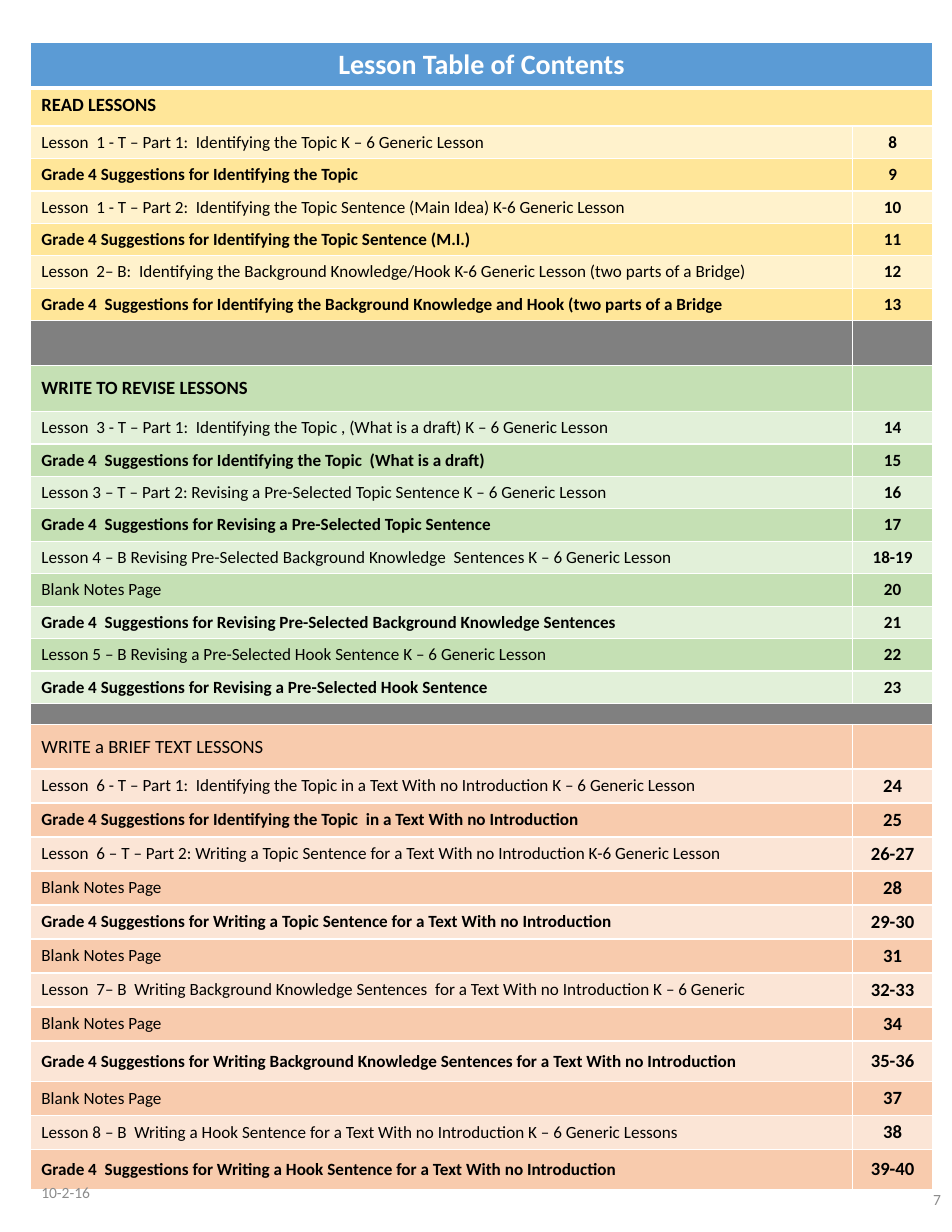
from dataclasses import dataclass

import pptx
import pptx.dml.color
import pptx.enum.text
import pptx.util
from lxml import etree
from pptx.oxml.ns import qn

Inches = pptx.util.Inches
Pt = pptx.util.Pt
ALIGN = pptx.enum.text.PP_ALIGN
ANCHOR = pptx.enum.text.MSO_ANCHOR

COLORS = {
    "white": "FFFFFF", "black": "000000", "footer": "8C8C8C",
    "title": "5B9BD5", "divider": "808080",
    "yellow": "FFE699", "light yellow": "FFF2CC",
    "green": "C5E0B4", "light green": "E2F0D9",
    "orange": "F8CBAD", "light orange": "FBE5D6",
}
BLANK = "Blank Notes Page"

READ = [
    ("Lesson  1 - T – Part 1:  Identifying the Topic K – 6 Generic Lesson", "8"),
    ("Grade 4 Suggestions for Identifying the Topic", "9"),
    ("Lesson  1 - T – Part 2:  Identifying the Topic Sentence (Main Idea) K-6 Generic Lesson", "10"),
    ("Grade 4 Suggestions for Identifying the Topic Sentence (M.I.)", "11"),
    ("Lesson  2– B:  Identifying the Background Knowledge/Hook K-6 Generic Lesson (two parts of a Bridge)", "12"),
    ("Grade 4  Suggestions for Identifying the Background Knowledge and Hook (two parts of a Bridge", "13"),
]
REVISE = [
    ("Lesson  3 - T – Part 1:  Identifying the Topic , (What is a draft) K – 6 Generic Lesson", "14"),
    ("Grade 4  Suggestions for Identifying the Topic  (What is a draft)", "15"),
    ("Lesson 3 – T – Part 2: Revising a Pre-Selected Topic Sentence K – 6 Generic Lesson", "16"),
    ("Grade 4  Suggestions for Revising a Pre-Selected Topic Sentence", "17"),
    ("Lesson 4 – B Revising Pre-Selected Background Knowledge  Sentences K – 6 Generic Lesson", "18-19"),
    (BLANK, "20"),
    ("Grade 4  Suggestions for Revising Pre-Selected Background Knowledge Sentences", "21"),
    ("Lesson 5 – B Revising a Pre-Selected Hook Sentence K – 6 Generic Lesson", "22"),
    ("Grade 4 Suggestions for Revising a Pre-Selected Hook Sentence", "23"),
]
WRITE = [
    ("Lesson  6 - T – Part 1:  Identifying the Topic in a Text With no Introduction K – 6 Generic Lesson", "24"),
    ("Grade 4 Suggestions for Identifying the Topic  in a Text With no Introduction", "25"),
    ("Lesson  6 – T – Part 2: Writing a Topic Sentence for a Text With no Introduction K-6 Generic Lesson", "26-27"),
    (BLANK, "28"),
    ("Grade 4 Suggestions for Writing a Topic Sentence for a Text With no Introduction", "29-30"),
    (BLANK, "31"),
    ("Lesson  7– B  Writing Background Knowledge Sentences  for a Text With no Introduction K – 6 Generic", "32-33"),
    (BLANK, "34"),
    ("Grade 4 Suggestions for Writing Background Knowledge Sentences for a Text With no Introduction", "35-36"),
    (BLANK, "37"),
    ("Lesson 8 – B  Writing a Hook Sentence for a Text With no Introduction K – 6 Generic Lessons", "38"),
    ("Grade 4  Suggestions for Writing a Hook Sentence for a Text With no Introduction", "39-40"),
]
TALL_PAGES = {"35-36", "39-40"}


@dataclass
class Row:
    texts: tuple
    fill: str
    height: float
    sizes: tuple = (12, 12)
    bold: bool = True
    color: str = "black"
    align: object = ALIGN.LEFT
    anchor: object = ANCHOR.MIDDLE
    merged: bool = False
    line_above: float = 1
    line_below: float = 1


def lesson_rows(lessons, hue, height, page_size):
    """Alternate light and full fills, with the grade suggestions in bold."""
    return [
        Row((text, page), hue if index % 2 else f"light {hue}",
            0.36 if page in TALL_PAGES else height, (11, page_size),
            text.startswith("Grade"))
        for index, (text, page) in enumerate(lessons)
    ]


class SlideBuilder:
    font = "Calibri"

    def __init__(self, slide):
        self.slide = slide

    def add_run(self, paragraph, text, size, color, bold=False):
        run = paragraph.add_run()
        run.text = text
        run.font.name = self.font
        run.font.size = Pt(size)
        run.font.bold = bold
        run.font.color.rgb = pptx.dml.color.RGBColor.from_string(COLORS[color])

    def add_footer(self, text, left, top, align):
        box = self.slide.shapes.add_textbox(
            Inches(left), Inches(top), Inches(1.91), Inches(0.59))
        frame = box.text_frame
        frame.word_wrap = True
        frame.vertical_anchor = ANCHOR.MIDDLE
        paragraph = frame.paragraphs[0]
        paragraph.alignment = align
        self.add_run(paragraph, text, 10, "footer")

    def style_cell(self, cell, row):
        properties = cell._tc.get_or_add_tcPr()
        widths = {"lnL": 1, "lnR": 1, "lnT": row.line_above, "lnB": row.line_below}
        for side, width in widths.items():
            line = etree.SubElement(properties, qn(f"a:{side}"), w=str(Pt(width)))
            fill = etree.SubElement(line, qn("a:solidFill"))
            etree.SubElement(fill, qn("a:srgbClr"), val=COLORS["white"])
        cell.fill.solid()
        cell.fill.fore_color.rgb = pptx.dml.color.RGBColor.from_string(COLORS[row.fill])
        cell.vertical_anchor = row.anchor

    def fill_cell(self, cell, row, column):
        self.style_cell(cell, row)
        paragraph = cell.text_frame.paragraphs[0]
        text = row.texts[column]
        if text:
            paragraph.alignment = ALIGN.CENTER if column else row.align
            self.add_run(paragraph, text, row.sizes[column], row.color,
                         row.bold or column == 1)
        else:
            # A small end mark keeps an empty row from growing.
            etree.SubElement(paragraph._p, qn("a:endParaRPr"), sz="500")

    def add_contents(self, rows):
        height = sum(row.height for row in rows)
        table = self.slide.shapes.add_table(
            len(rows), 2, Inches(0.27), Inches(0.38), Inches(8.06), Inches(height)).table
        for column, width in zip(table.columns, (7.34, 0.72)):
            column.width = Inches(width)
        for index, row in enumerate(rows):
            table.rows[index].height = Inches(row.height)
            for column in range(2):
                self.fill_cell(table.cell(index, column), row, column)
            if row.merged:
                table.cell(index, 0).merge(table.cell(index, 1))


def main():
    presentation = pptx.Presentation()
    presentation.slide_width = Inches(8.5)
    presentation.slide_height = Inches(11)
    builder = SlideBuilder(presentation.slides.add_slide(presentation.slide_layouts[6]))

    builder.add_contents([
        Row(("Lesson Table of Contents", ""), "title", 0.4, (18, 18), color="white",
            align=ALIGN.CENTER, anchor=ANCHOR.TOP, merged=True, line_below=3),
        Row(("READ LESSONS", ""), "yellow", 0.34, anchor=ANCHOR.TOP, merged=True,
            line_above=3),
        *lesson_rows(READ, "yellow", 0.29, 11),
        Row(("", ""), "divider", 0.4),
        Row(("WRITE TO REVISE LESSONS", ""), "green", 0.41),
        *lesson_rows(REVISE, "green", 0.29, 11),
        Row(("", ""), "divider", 0.18, merged=True),
        Row(("WRITE a BRIEF TEXT LESSONS", ""), "orange", 0.4, bold=False),
        *lesson_rows(WRITE, "orange", 0.3, 12),
    ])
    builder.add_footer("7", 6.59, 10.41, ALIGN.RIGHT)
    builder.add_footer("10-2-16", 0.27, 10.35, ALIGN.LEFT)
    presentation.save("out.pptx")


if __name__ == "__main__":
    main()
